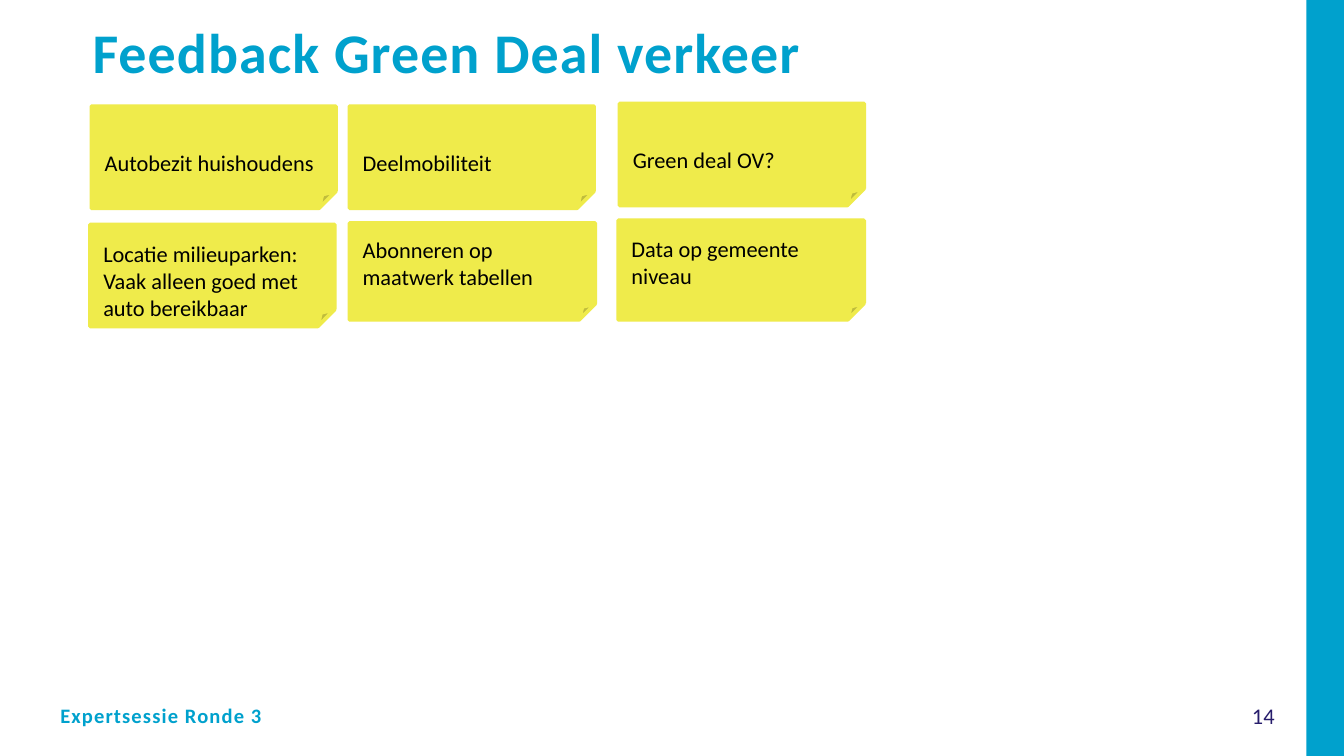
from pptx import Presentation
from pptx.dml.color import RGBColor
from pptx.enum.shapes import MSO_SHAPE
from pptx.enum.text import MSO_ANCHOR, PP_ALIGN
from pptx.util import Inches, Pt

RECTANGLE = MSO_SHAPE.RECTANGLE
FOLDED_CORNER = MSO_SHAPE.FOLDED_CORNER
TOP, MIDDLE = MSO_ANCHOR.TOP, MSO_ANCHOR.MIDDLE
LEFT, CENTER = PP_ALIGN.LEFT, PP_ALIGN.CENTER

CYAN, NAVY, YELLOW, BLACK = "00A1CD", "271D6C", "EFEB4B", "000000"
HEADING = {"name": "Calibri", "size": Pt(30), "bold": True}
FOOTER = {"name": "Calibri", "size": Pt(11), "bold": True}
BODY = {"name": "Calibri", "size": Pt(12), "bold": False}

NOTE_INSET, LOWERED_INSET = 0.05, 0.25
NOTES = [
    ("Autobezit huishoudens", (0.68, 0.79, 1.82, 0.76), LOWERED_INSET),
    ("Deelmobiliteit", (2.6, 0.79, 1.82, 0.76), LOWERED_INSET),
    ("Green deal OV?", (4.61, 0.77, 1.82, 0.76), LOWERED_INSET),
    ("Locatie milieuparken: Vaak alleen goed met auto bereikbaar",
     (0.67, 1.67, 1.82, 0.76), LOWERED_INSET),
    ("Abonneren op maatwerk tabellen", (2.6, 1.66, 1.83, 0.72), NOTE_INSET),
    ("Data op gemeente niveau", (4.6, 1.64, 1.83, 0.74), NOTE_INSET),
]


def color(value):
    """Return the colour for a hex string."""
    return RGBColor.from_string(value)


def write(shape, text, style, ink, align=LEFT, anchor=TOP, spacing=None):
    """Write one formatted paragraph into a shape."""
    frame = shape.text_frame
    frame.word_wrap = True
    frame.vertical_anchor = anchor
    para = frame.paragraphs[0]
    para.alignment = align
    span = para.add_run()
    span.text = text
    for name, value in style.items():
        setattr(span.font, name, value)
    span.font.color.rgb = color(ink)
    if spacing:
        span._r.get_or_add_rPr().set("spc", str(spacing))


def add_label(page, box, text, style, ink, **layout):
    """Add a text box with one paragraph."""
    label = page.shapes.add_textbox(*map(Inches, box))
    write(label, text, style, ink, **layout)


def add_block(page, kind, box, fill):
    """Add a flat filled shape without a shadow."""
    block = page.shapes.add_shape(kind, *map(Inches, box))
    block.shadow.inherit = False
    block.fill.solid()
    block.fill.fore_color.rgb = color(fill)
    return block


def add_side_band(page, box):
    """Add the coloured band along the edge of the page."""
    add_block(page, RECTANGLE, box, CYAN).line.fill.background()


def add_note(page, box, text, top_inset):
    """Add a sticky note with a folded corner."""
    note = add_block(page, FOLDED_CORNER, box, YELLOW)
    note.line.color.rgb = color(YELLOW)
    note.line.width = Pt(2)
    note.text_frame.margin_top = Inches(top_inset)
    write(note, text, BODY, BLACK, anchor=MIDDLE)


def build_feedback_page(page, width, height):
    """Place the band, heading, notes and footer on the page."""
    band = 0.28
    add_side_band(page, (width - band, 0, band, height))
    add_label(page, (width - band - 0.64, 5.15, 0.64, 0.35), "14", BODY, NAVY,
              align=CENTER, anchor=MIDDLE)
    add_label(page, (0.59, 0.08, 8.35, 0.55), "Feedback Green Deal verkeer",
              HEADING, CYAN, spacing=60)
    for text, box, top_inset in NOTES:
        add_note(page, box, text, top_inset)
    add_label(page, (0.35, 5.18, 2.05, 0.29), "Expertsessie Ronde 3",
              FOOTER, CYAN, spacing=60)


def main():
    """Build and save the deck."""
    width = 10
    height = width * 9 / 16
    deck = Presentation()
    deck.slide_width, deck.slide_height = Inches(width), Inches(height)
    page = deck.slides.add_slide(deck.slide_layouts[6])
    build_feedback_page(page, width, height)
    deck.save("out.pptx")


if __name__ == "__main__":
    main()
